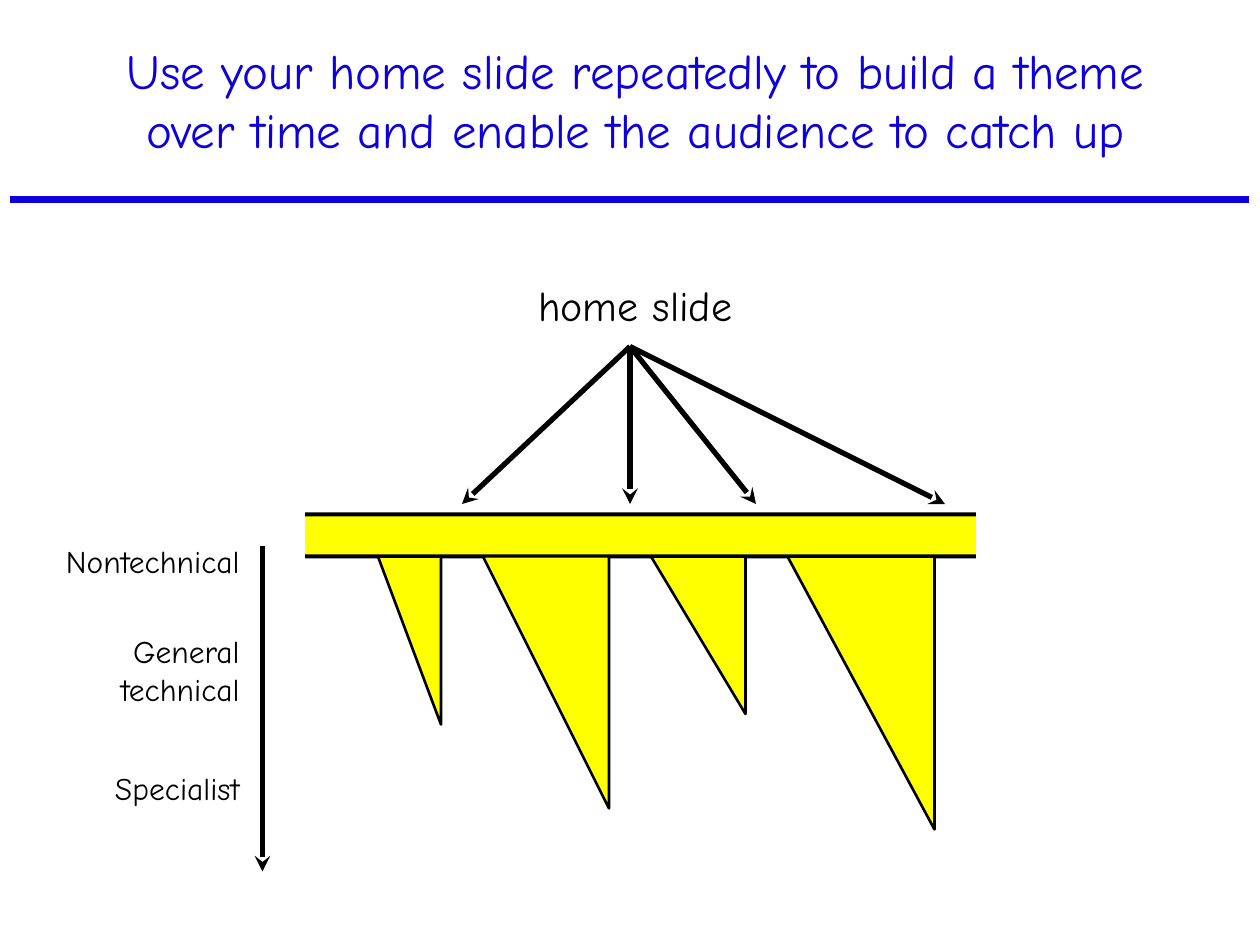
from lxml.etree import SubElement
from pptx import Presentation
from pptx.dml.color import RGBColor
from pptx.enum.shapes import MSO_CONNECTOR, MSO_SHAPE
from pptx.enum.text import MSO_ANCHOR, MSO_AUTO_SIZE, PP_ALIGN
from pptx.oxml.ns import qn
from pptx.util import Inches, Pt

COLORS = {name: RGBColor.from_string(value) for name, value in {
    "blue": "0E00DC", "yellow": "FFFF00", "black": "000000", "white": "FFFFFF",
}.items()}
FONT = "Comic Neue"

# The slide is a grid of 120 columns by 90 rows, twelve to the inch.
CELL = Inches(1) / 12

deck = Presentation()
deck.slide_width = int(120 * CELL)
deck.slide_height = int(90 * CELL)
page = deck.slides.add_slide(deck.slide_layouts[5])
shapes = page.shapes


def on_grid(*cells):
    return [round(cell * CELL) for cell in cells]


def write(frame, lines, size, color, align):
    """Fill a text frame with one paragraph per line."""
    frame.word_wrap = True
    for index, line in enumerate(lines):
        para = frame.add_paragraph() if index else frame.paragraphs[0]
        para.alignment = align
        span = para.add_run()
        span.text = line
        span.font.name = FONT
        span.font.size = Pt(size)
        span.font.color.rgb = COLORS[color]


# Title
title = shapes.title
title.left, title.top, title.width, title.height = on_grid(6, 2, 109, 15)
title.text_frame.vertical_anchor = MSO_ANCHOR.MIDDLE
title.text_frame.auto_size = MSO_AUTO_SIZE.NONE
write(title.text_frame,
      ["Use your home slide repeatedly to build a theme "
       "over time and enable the audience to catch up"],
      28, "blue", PP_ALIGN.CENTER)

# Theme bar flaring at both ends, and the wedges that dip from it
BAR_TOP, BAR_BOTTOM = 49, 53
bar = [(18, 38), (28.4, BAR_TOP), (94.4, BAR_TOP), (104, 39),
       (104, 63), (94.4, BAR_BOTTOM), (28.4, BAR_BOTTOM), (18, 62)]
wedges = [(36, 42, 69), (46, 58, 77), (62, 71, 68), (75, 89, 79)]
outlines = [(bar, 2.25)]
for left, right, tip in wedges:
    outlines.append(([(left, BAR_BOTTOM), (right, tip), (right, BAR_BOTTOM)], 1.5))

for corners, weight in outlines:
    start, *others = [on_grid(*corner) for corner in corners]
    builder = shapes.build_freeform(*start)
    builder.add_line_segments(others, close=True)
    outline = builder.convert_to_shape()
    outline.shadow.inherit = False
    outline.fill.solid()
    outline.fill.fore_color.rgb = COLORS["yellow"]
    outline.line.color.rgb = COLORS["black"]
    outline.line.width = Pt(weight)

# White panels that trim the bar's flared ends
for area in [(3, 35, 26, 34), (93, 34, 25, 34)]:
    panel = shapes.add_shape(MSO_SHAPE.RECTANGLE, *on_grid(*area))
    panel.shadow.inherit = False
    panel.fill.solid()
    panel.fill.fore_color.rgb = COLORS["white"]
    panel.line.color.rgb = COLORS["white"]
    panel.line.width = Pt(0.75)

# Captions: the home slide and the levels of depth
captions = [
    (["home slide"], (30, 26, 61, 6.8), 24, PP_ALIGN.CENTER),
    (["Nontechnical"], (3, 51, 21, 5.4), 18, PP_ALIGN.RIGHT),
    (["General", "technical"], (3, 59.6, 21, 9.6), 18, PP_ALIGN.RIGHT),
    (["Specialist"], (3, 72.6, 21, 5.4), 18, PP_ALIGN.RIGHT),
]
for lines, area, size, align in captions:
    box = shapes.add_textbox(*on_grid(*area))
    box.text_frame.auto_size = MSO_AUTO_SIZE.SHAPE_TO_FIT_TEXT
    write(box.text_frame, lines, size, "black", align)

# Title rule, depth axis and the arrows fanning out from the home slide
strokes = [((1, 19, 119, 19), "blue", 4.5, False),
           ((25, 52, 25, 83), "black", 3, True)]
strokes += [((60, 33, column, 48), "black", 3, True) for column in (44, 60, 72, 90)]
for ends, color, weight, has_head in strokes:
    stroke = shapes.add_connector(MSO_CONNECTOR.STRAIGHT, *on_grid(*ends))
    stroke.line.color.rgb = COLORS[color]
    stroke.line.width = Pt(weight)
    if has_head:
        SubElement(stroke.line._get_or_add_ln(), qn("a:tailEnd"), type="stealth")
    SubElement(stroke._element.spPr, qn("a:effectLst"))

deck.save("out.pptx")
